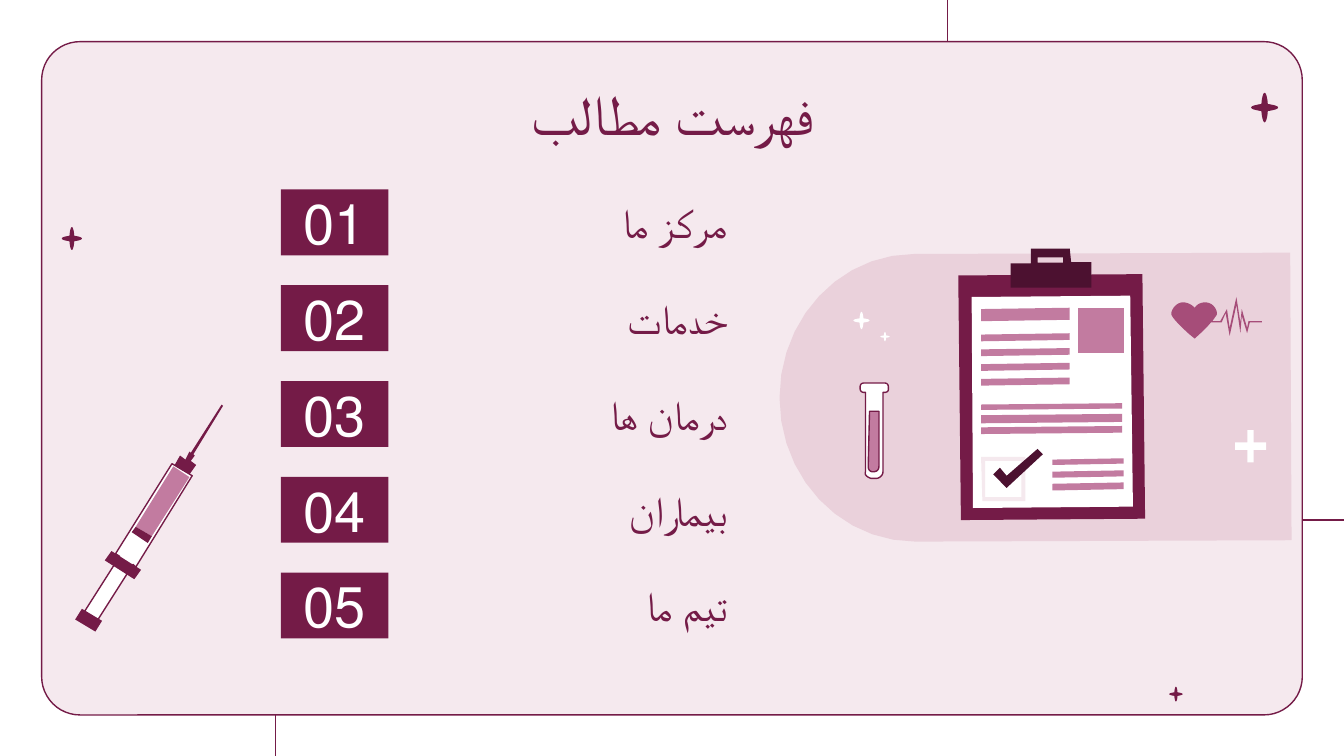
from lxml import etree
from pptx import Presentation
from pptx.dml.color import RGBColor
from pptx.enum.shapes import MSO_CONNECTOR, MSO_SHAPE
from pptx.enum.text import MSO_ANCHOR, PP_ALIGN
from pptx.oxml.ns import qn
from pptx.util import Inches, Pt

STRAIGHT = MSO_CONNECTOR.STRAIGHT
RECTANGLE, ROUNDED, CROSS = MSO_SHAPE.RECTANGLE, MSO_SHAPE.ROUNDED_RECTANGLE, MSO_SHAPE.CROSS
TOP, MIDDLE = MSO_ANCHOR.TOP, MSO_ANCHOR.MIDDLE
CENTER, RIGHT = PP_ALIGN.CENTER, PP_ALIGN.RIGHT
TITLE_ONLY = 5

FONT = "Lato"
COLORS = {"plum": "741B47", "dark": "4C1130", "rose": "C27BA0", "heart": "A64D79",
          "blush": "EAD1DB", "pale": "F5E9EE", "white": "FFFFFF"}
TOPICS = ["مرکز ما", "خدمات", "درمان ها", "بیماران", "تیم ما"]


def color(name):
    return RGBColor.from_string(COLORS[name])


def paint(shape, fill, line=None):
    shape.shadow.inherit = False
    shape.fill.solid()
    shape.fill.fore_color.rgb = color(fill)
    if line:
        shape.line.color.rgb = color(line)
        shape.line.width = Pt(0.75)
    else:
        shape.line.fill.background()
    return shape


def write(shape, text, size, ink="plum", align=CENTER, anchor=MIDDLE):
    """Set right-to-left text in the shape."""
    frame = shape.text_frame
    frame.word_wrap = True
    frame.vertical_anchor = anchor
    frame.margin_left = frame.margin_right = Inches(0.1)
    frame.margin_top = frame.margin_bottom = Inches(0.1)
    paragraph = frame.paragraphs[0]
    paragraph.alignment = align
    paragraph._p.get_or_add_pPr().set("rtl", "1")
    run = paragraph.add_run()
    run.text = text
    run.font.size = Pt(size)
    run.font.name = FONT
    run.font.color.rgb = color(ink)


def bezier(start, curve, steps=10):
    """Points along a cubic curve given as two controls and an end."""
    (x0, y0), (x1, y1, x2, y2, x3, y3) = start, curve
    points = []
    for step in range(1, steps + 1):
        t = step / steps
        u = 1 - t
        a, b, c, d = u ** 3, 3 * u * u * t, 3 * u * t * t, t ** 3
        points.append((a * x0 + b * x1 + c * x2 + d * x3, a * y0 + b * y1 + c * y2 + d * y3))
    return points


def outline(slide, box, contours, fill, line=None):
    """Closed contours in hundredths of an inch from the box corner; six numbers make a curve."""
    def place(point):
        return Inches(box[0] + point[0] / 100), Inches(box[1] + point[1] / 100)

    builder = None
    for contour in contours:
        points = [contour[0]]
        for segment in contour[1:]:
            points += [segment] if len(segment) == 2 else bezier(points[-1], segment)
        start, *rest = map(place, points)
        if builder is None:
            builder = slide.shapes.build_freeform(*start, scale=1.0)
        else:
            builder.move_to(*start)
        builder.add_line_segments(rest, close=True)
    return paint(builder.convert_to_shape(), fill, line)


def sparkle(slide, box, fill):
    left, top, width, height = box
    x, y = width * 50, height * 50

    def tip(dx, dy):
        return x + dx * x, y + dy * y

    star = [tip(0, -1)]
    for sx, sy, upright in [(-1, -1, True), (-1, 1, False), (1, 1, True), (1, -1, False)]:
        inner = tip(0.24 * sx, 0.24 * sy)
        toward_side = (*tip(0.7 * sx, 0.18 * sy), *tip(sx, 0.1 * sy), *tip(sx, 0))
        if upright:
            star += [(*tip(0.1 * sx, sy), *tip(0.2 * sx, 0.7 * sy), *inner), toward_side]
        else:
            star += [(*tip(sx, 0.1 * sy), *tip(0.7 * sx, 0.18 * sy), *inner),
                     (*tip(0.2 * sx, 0.7 * sy), *tip(0.1 * sx, sy), *tip(0, sy))]
    return outline(slide, (left, top), [star], fill)


def backdrop(slide, box):
    left, top, width, height = box
    right, bottom = left + width, top + height
    card = slide.shapes.add_shape(ROUNDED, *map(Inches, box))
    card.adjustments[0] = 0.057
    paint(card, "pale", "plum")
    for ends in [(7.05, top, 7.05, 0), (2.05, bottom + 0.31, 2.05, bottom),
                 (right, 3.87, right + 0.31, 3.87)]:
        rule = slide.shapes.add_connector(STRAIGHT, *map(Inches, ends))
        rule.line.color.rgb = color("plum")
        rule.line.width = Pt(0.75)
        etree.SubElement(rule._element.spPr, qn("a:effectLst"))
    slide.shapes.add_group_shape([
        sparkle(slide, (left + dx, top + dy, w, h), "plum")
        for dx, dy, w, h in [(0.15, 1.38, 0.15, 0.17), (9, 0.38, 0.2, 0.22), (8.39, 4.8, 0.1, 0.11)]])


def heading(slide, box, text):
    title = slide.shapes.title
    slide.shapes._spTree.append(title._element)
    title.left, title.top, title.width, title.height = map(Inches, box)
    write(title, text, 30, anchor=TOP)


def contents(slide, box):
    left, top, width, height = box
    row_height = 0.49
    pitch = (height - row_height) / (len(TOPICS) - 1)
    for index, topic in enumerate(TOPICS):
        row_top = Inches(top + index * pitch)
        number = slide.shapes.add_shape(RECTANGLE, Inches(left), row_top, Inches(0.8), Inches(row_height))
        write(paint(number, "plum"), f"{index + 1:02}", 30, ink="white")
        entry = slide.shapes.add_textbox(Inches(left + 0.95), row_top, Inches(width - 0.95), Inches(row_height))
        write(entry, topic, 22, align=RIGHT)


def syringe(slide, box):
    needle = [(109, 0), (86, 36), (85, 35), (82, 41), (78, 38), (74, 45), (85, 52),
              (90, 45), (86, 42), (89, 38), (88, 37), (110, 1)]
    barrel = [(72, 44), (30, 111), (33, 113), (5, 157), (15, 163), (43, 119), (45, 121), (87, 53)]
    thumb_rest = [(5, 152), (0, 160), (15, 169), (20, 161)]
    flange = [(27, 109), (22, 116), (44, 130), (49, 123)]
    dose = [(73, 46), (45, 91), (57, 98), (85, 54)]
    plunger = [(45, 91), (42, 95), (54, 103), (57, 98)]
    slide.shapes.add_group_shape([
        outline(slide, box, [needle], "plum"), outline(slide, box, [barrel], "white", "plum"),
        outline(slide, box, [thumb_rest], "plum"), outline(slide, box, [flange], "plum"),
        outline(slide, box, [dose], "rose"), outline(slide, box, [plunger], "plum")])


def clipboard(slide, box):
    board = [(137, 19), (0, 20), (2, 202), (139, 201)]
    clip = [(83, 0), (54, 0), (54, 11), (39, 11), (39, 29), (99, 29), (99, 10), (84, 10)]
    clip_hole = [(78, 6.5), (78, 10.5), (59, 10.5), (59, 6.5)]
    paper = [(128, 35), (10, 36), (11, 193), (130, 192)]
    tick_box = [(50, 155), (17, 155), (18, 188), (50, 188)]
    tick_hole = [(47, 158), (47, 185), (20, 185), (20, 158)]
    tick = [(59, 149), (36, 169), (31, 163), (26, 168), (36, 178), (63, 153)]
    photo = [(123, 44), (89, 44), (89, 78), (123, 78)]
    text_lines = [(17, 83, 44, 9)]
    text_lines += [(17, 83, 63 + 11 * row, 5) for row in range(4)]
    text_lines += [(17, 122, 115, 4), (17, 122, 123, 6), (17, 122, 132, 5)]
    text_lines += [(70, 123, 156 + 9 * row, 4 + row / 2) for row in range(3)]
    parts = [([board], "plum"), ([clip, clip_hole], "dark"), ([paper], "white"),
             ([tick_box, tick_hole], "pale"), ([tick], "dark"), ([photo], "rose")]
    parts += [([[(end, y), (start, y + 1), (start, y + 1 + thick), (end, y + thick)]], "rose")
              for start, end, y, thick in text_lines]
    return [outline(slide, box, contours, fill) for contours, fill in parts]


def heartbeat(slide, box):
    pulse = [(50, 0), (45, 23), (43, 9), (38, 18), (32, 18), (33, 17, 34, 15, 35, 14),
             (37, 11, 33, 4, 27, 4), (24, 4, 21, 5, 19, 8), (16, 5, 13, 4, 10, 4),
             (5, 4, 0, 11, 2, 14), (5, 19, 15, 28, 19, 31), (21, 29, 27, 24, 31, 19),
             (39, 19), (42, 12), (45, 29), (50, 6), (53, 27), (54, 14), (58, 27), (60, 19),
             (69, 19), (69, 18), (59, 18), (58, 23), (54, 9), (53, 19)]
    return outline(slide, box, [pulse], "heart")


def test_tube(slide, box):
    glass = [(18, 0), (3, 0), (1, 0, 0, 1, 0, 3), (0, 4), (0, 6, 1, 7, 3, 7), (4, 7), (4, 66),
             (3, 68, 5, 70, 8, 71), (12, 71), (14, 71, 17, 69, 17, 66), (17, 7), (18, 7),
             (20, 7, 21, 6, 21, 5), (21, 3), (21, 1, 20, 0, 18, 0)]
    sample = [(14, 21), (7, 21), (6, 62), (6, 65, 8, 66, 9, 66), (10, 66), (12, 66, 14, 65, 14, 62)]
    return [outline(slide, box, [glass], "white", "plum"), outline(slide, box, [sample], "rose", "plum")]


def health_record(slide, box):
    left, top = box
    panel = [(101, 215), (381, 214), (380, 0), (100, 1), (45, 1, 0, 49, 0, 108), (0, 167, 45, 215, 101, 215)]
    parts = [outline(slide, box, [panel], "blush")]
    parts += clipboard(slide, (left + 1.33, top - 0.03))
    parts.append(heartbeat(slide, (left + 2.9, top + 0.33)))
    plus = slide.shapes.add_shape(CROSS, *map(Inches, (left + 3.39, top + 1.32, 0.23, 0.24)))
    plus.adjustments[0] = 0.4
    parts.append(paint(plus, "white"))
    parts.append(sparkle(slide, (left + 0.55, top + 0.44, 0.12, 0.13), "white"))
    parts.append(sparkle(slide, (left + 0.75, top + 0.59, 0.07, 0.07), "white"))
    parts += test_tube(slide, (left + 0.6, top + 0.97))
    slide.shapes.add_group_shape(parts)


def main():
    deck = Presentation()
    deck.slide_width = Inches(10)
    deck.slide_height = deck.slide_width * 9 // 16
    slide = deck.slides.add_slide(deck.slide_layouts[TITLE_ONLY])
    backdrop(slide, (0.31, 0.31, 9.38, 5.01))
    heading(slide, (0.79, 0.49, 8.43, 0.63), "فهرست مطالب")
    contents(slide, (2.09, 1.41, 3.42, 3.34))
    syringe(slide, (0.56, 3.01))
    health_record(slide, (5.8, 1.88))
    deck.save("out.pptx")


if __name__ == "__main__":
    main()
